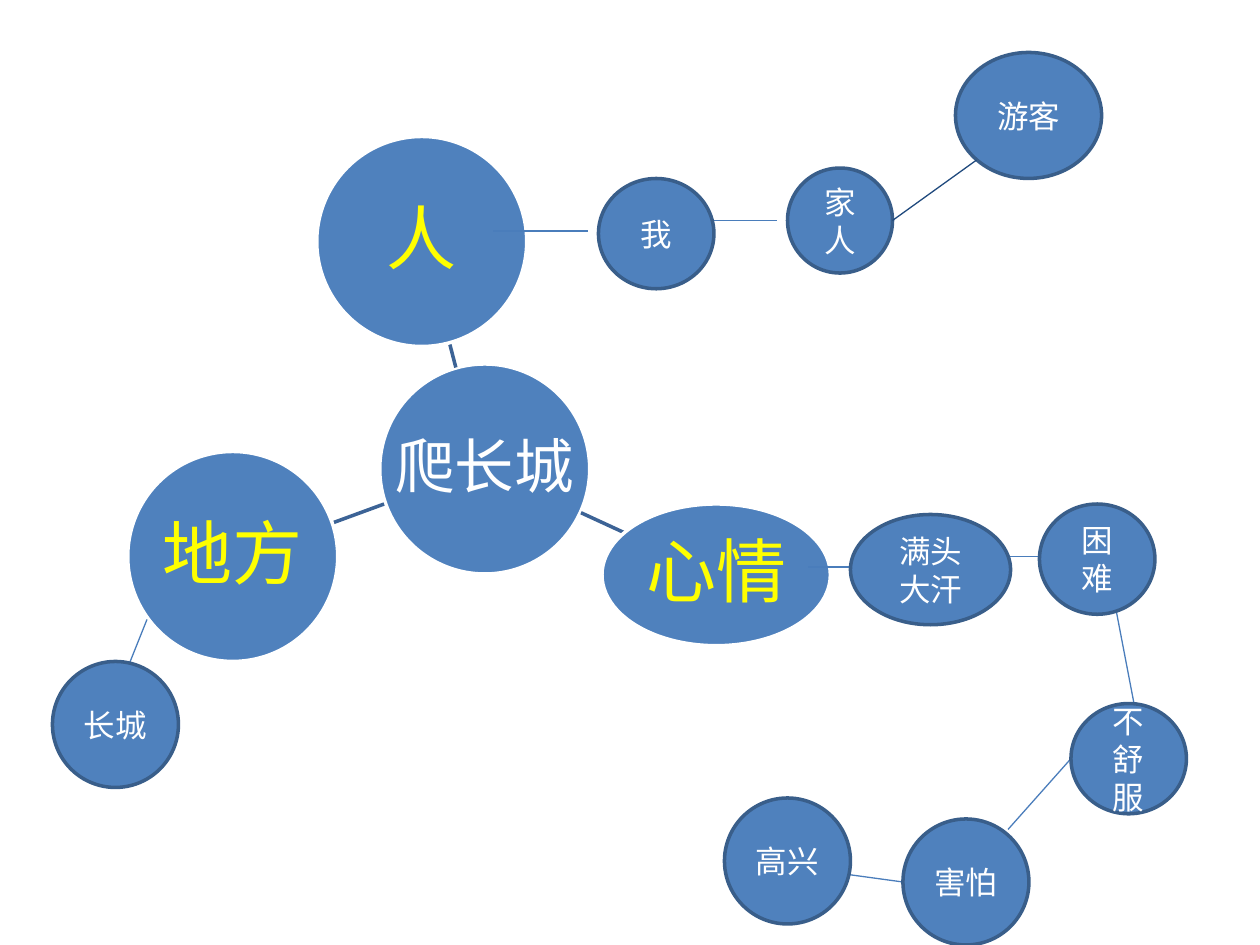
from lxml import etree
from pptx import Presentation
from pptx.dml.color import RGBColor
from pptx.enum import shapes, text
from pptx.oxml import ns
from pptx.util import Pt

# Content: label, left, top, width, height
CENTRE = ("爬长城", 217, 208, 120, 120)
TOPICS = [
    ("人", 181, 78, 120, 120),
    ("心情", 344, 288, 130.5, 81),
    ("地方", 73, 258, 120, 120),
]
IDEAS = [
    ("我", 342, 102, 66, 63),
    ("家人", 450, 96, 60, 60),
    ("游客", 546, 30, 83.5, 72),
    ("满头大汗", 486, 294, 91.5, 63),
    ("困难", 594, 288, 66, 63),
    ("不舒服", 612, 402, 66, 63),
    ("害怕", 516, 468, 72, 72),
    ("高兴", 414, 456, 72, 72),
    ("长城", 30, 378, 72, 72),
]

# Lines: start x, start y, end x, end y
SPOKES = [
    (260.5, 210, 257, 196.5),
    (332, 293, 357, 304.5),
    (219.5, 288, 189.5, 299),
]
LINKS = [
    (282, 132, 336, 132),
    (408, 126, 444, 126),
    (462, 324, 486, 324),
    (576, 318, 602, 318),
    (636.5, 342, 648, 402),
    (612, 433.5, 576, 474),
    (516, 504, 483, 499.5),
    (84, 354, 72, 384),
]
VISITOR_LINK = (510, 126, 558, 91.5)

FONT = "Calibri"
BLUE, WHITE, YELLOW = "4F81BD", "FFFFFF", "FFFF00"


def colour(hex_value):
    return RGBColor.from_string(hex_value)


def write_text(shape, content, size, hex_value, wrap=True, insets=(7.2, 3.6),
               line_spacing=None, space_after=None):
    frame = shape.text_frame
    frame.word_wrap = wrap
    frame.vertical_anchor = text.MSO_ANCHOR.MIDDLE
    frame.margin_left = frame.margin_right = Pt(insets[0])
    frame.margin_top = frame.margin_bottom = Pt(insets[1])
    paragraph = frame.paragraphs[0]
    paragraph.text = content
    paragraph.alignment = text.PP_ALIGN.CENTER
    if line_spacing:
        paragraph.line_spacing = line_spacing
    if space_after:
        paragraph.space_after = Pt(space_after)
    font = paragraph.runs[0].font
    font.name, font.size = FONT, Pt(size)
    font.color.rgb = colour(hex_value)


def add_bubble(slide, bubble, outline, **text_format):
    label, *box = bubble
    shape = slide.shapes.add_shape(shapes.MSO_SHAPE.OVAL, *map(Pt, box))
    shape.shadow.inherit = False
    shape.fill.solid()
    shape.fill.fore_color.rgb = colour(BLUE)
    shape.line.color.rgb = colour(outline)
    shape.line.width = Pt(2)
    write_text(shape, label, **text_format)


def add_line(slide, ends, hex_value, width):
    connector = slide.shapes.add_connector(
        shapes.MSO_CONNECTOR.STRAIGHT, *map(Pt, ends))
    connector.line.color.rgb = colour(hex_value)
    connector.line.width = Pt(width)
    etree.SubElement(connector._element.spPr, ns.qn("a:effectLst"))


def main():
    presentation = Presentation()
    presentation.slide_width, presentation.slide_height = Pt(720), Pt(540)
    slide = presentation.slides.add_slide(presentation.slide_layouts[6])

    # Central idea, spokes and main topics
    hub_format = dict(wrap=False, insets=(2, 2), line_spacing=0.9)
    add_bubble(slide, CENTRE, WHITE, size=34, hex_value=WHITE,
               space_after=11.9, **hub_format)
    for ends in SPOKES:
        add_line(slide, ends, "3C6396", 2)
    for topic in TOPICS:
        add_bubble(slide, topic, WHITE, size=40, hex_value=YELLOW,
                   space_after=14, **hub_format)

    # Chains of ideas
    for ends in LINKS:
        add_line(slide, ends, "4A7DBB", 0.75)
    for idea in IDEAS:
        add_bubble(slide, idea, "395E8A", size=18, hex_value=WHITE)
    add_line(slide, VISITOR_LINK, "1F497D", 0.75)

    presentation.save("out.pptx")


if __name__ == "__main__":
    main()
